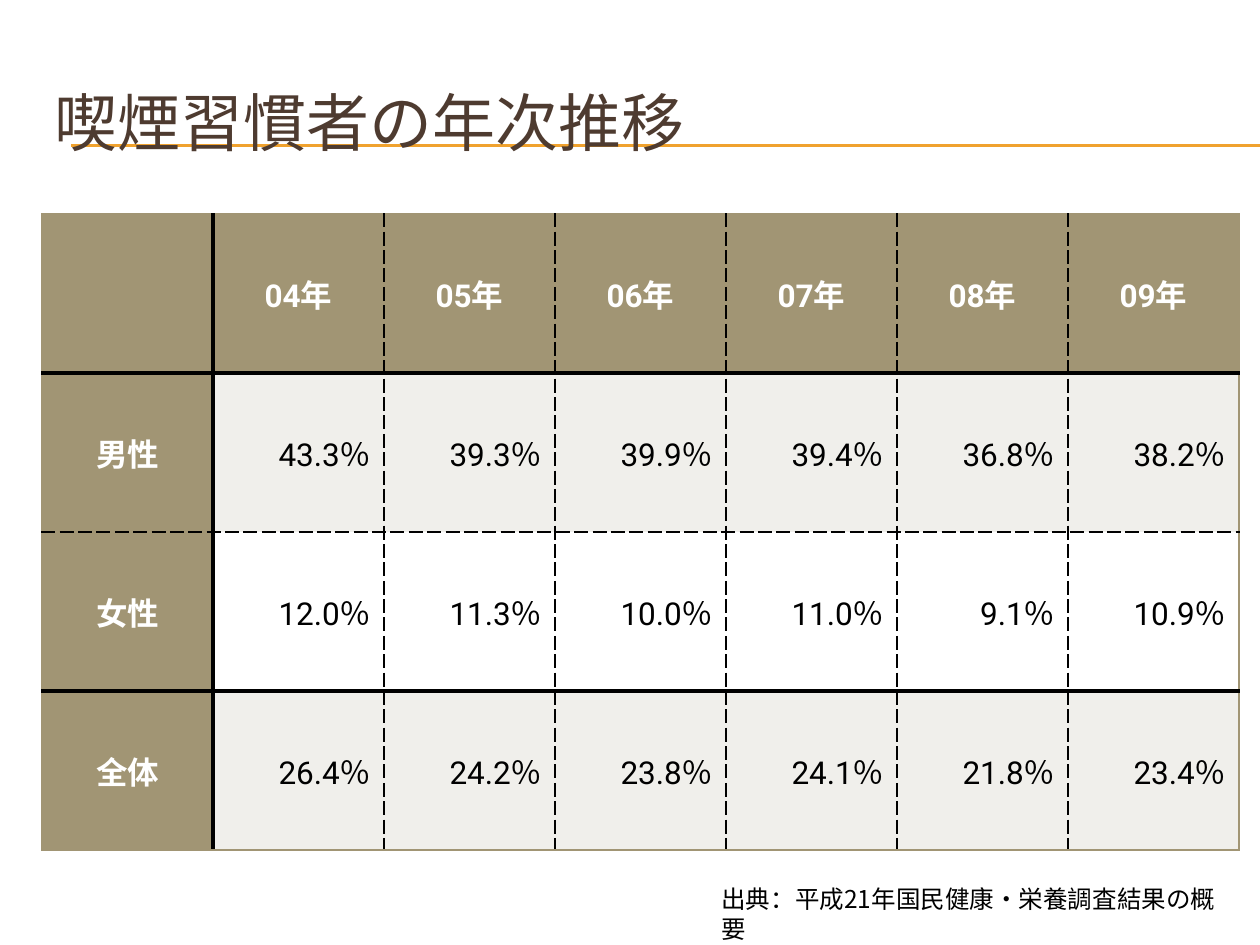
from lxml import etree
from pptx import Presentation, util as u
from pptx.dml.color import RGBColor
from pptx.enum import shapes, text
from pptx.oxml.ns import qn

BLACK = RGBColor(0x00, 0x00, 0x00)
WHITE = RGBColor(0xFF, 0xFF, 0xFF)
TAN = RGBColor(0xA1, 0x95, 0x74)
PALE = RGBColor(0xF0, 0xEF, 0xEB)
BROWN = RGBColor(0x4E, 0x3B, 0x30)
ORANGE = RGBColor(0xF0, 0xA2, 0x2E)

EDGE = (TAN, 1, "solid")
HEAVY = (BLACK, 2.25, "solid")
DASHED = (BLACK, 1, "dash")
COLUMN_RULES = [EDGE, HEAVY] + [DASHED] * 5 + [EDGE]
ROW_RULES = [EDGE, HEAVY, DASHED, HEAVY, EDGE]

ROWS = [
    ["", "04年", "05年", "06年", "07年", "08年", "09年"],
    ["男性", "43.3％", "39.3％", "39.9％", "39.4％", "36.8％", "38.2％"],
    ["女性", "12.0％", "11.3％", "10.0％", "11.0％", "9.1％", "10.9％"],
    ["全体", "26.4％", "24.2％", "23.8％", "24.1％", "21.8％", "23.4％"],
]


def px(n):
    return u.Inches(n / 126)


class Deck:
    font = "Roboto"
    cjk_font = "Noto Sans CJK JP"

    def __init__(self):
        self.prs = Presentation()
        self.prs.slide_width, self.prs.slide_height = px(1260), px(945)
        self.s = self.prs.slides.add_slide(self.prs.slide_layouts[6])

    def style(self, p, size, color, bold=False, name=None):
        f = p.font
        f.name, f.size, f.bold = name or self.font, u.Pt(size), bold
        f.color.rgb = color

    def line(self, x1, y1, x2, y2, color, width):
        c = self.s.shapes.add_connector(
            shapes.MSO_CONNECTOR.STRAIGHT, px(x1), px(y1), px(x2), px(y2))
        c.line.color.rgb = color
        c.line.width = u.Pt(width)
        etree.SubElement(c._element.spPr, qn("a:effectLst"))

    def text(self, x, y, w, h, words, size, color, name=None,
             anchor=text.MSO_ANCHOR.TOP):
        sp = self.s.shapes.add_textbox(px(x), px(y), px(w), px(h))
        tf = sp.text_frame
        tf.word_wrap = True
        tf.vertical_anchor = anchor
        p = tf.paragraphs[0]
        p.text = words
        self.style(p, size, color, name=name)

    def border(self, cell, side, rule):
        color, width, dash = rule
        ln = etree.SubElement(cell._tc.get_or_add_tcPr(), qn("a:ln" + side),
                              w=str(u.Pt(width)))
        fill = etree.SubElement(ln, qn("a:solidFill"))
        etree.SubElement(fill, qn("a:srgbClr"), val=str(color))
        etree.SubElement(ln, qn("a:prstDash"), val=dash)

    def cell(self, cell, words, i, j):
        header = i == 0 or j == 0
        for side, rule in (("L", COLUMN_RULES[j]), ("R", COLUMN_RULES[j + 1]),
                           ("T", ROW_RULES[i]), ("B", ROW_RULES[i + 1])):
            self.border(cell, side, rule)
        cell.fill.solid()
        cell.fill.fore_color.rgb = TAN if header else PALE if i % 2 else WHITE
        cell.vertical_anchor = text.MSO_ANCHOR.MIDDLE
        p = cell.text_frame.paragraphs[0]
        p.text = words
        p.alignment = text.PP_ALIGN.CENTER if header else text.PP_ALIGN.RIGHT
        self.style(p, 18, WHITE if header else BLACK, header)

    def table(self, x, y, col_width, row_height, rows):
        n, m = len(rows), len(rows[0])
        t = self.s.shapes.add_table(n, m, px(x), px(y), px(col_width * m),
                                    px(row_height * n)).table
        for col in t.columns:
            col.width = px(col_width)
        for i, row in enumerate(rows):
            t.rows[i].height = px(row_height)
            for j, words in enumerate(row):
                self.cell(t.cell(i, j), words, i, j)


def main():
    d = Deck()
    for y in (145, 146):
        d.line(71, y, 1260, y, ORANGE, 0.75)
    d.text(42, 63, 1197, 116, "喫煙習慣者の年次推移", 36, BROWN,
           anchor=text.MSO_ANCHOR.MIDDLE)
    d.table(42, 214, 171, 159, ROWS)
    d.text(709, 878, 525, 43, "出典：平成21年国民健康・栄養調査結果の概要",
           14, BLACK, d.cjk_font)
    d.prs.save("out.pptx")


if __name__ == "__main__":
    main()
